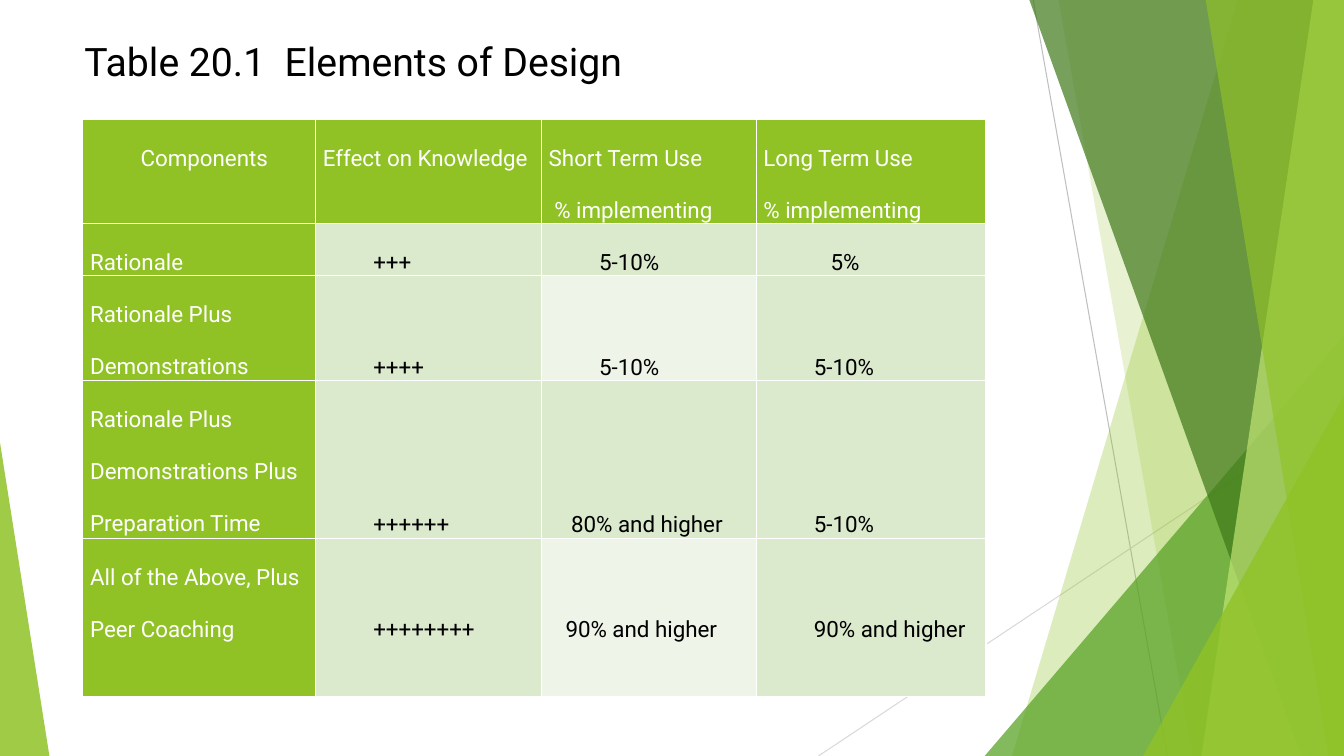
from lxml.etree import SubElement
from pptx import Presentation
from pptx.dml.color import RGBColor
from pptx.enum.shapes import MSO_CONNECTOR as Link, MSO_SHAPE as Shape
from pptx.enum.text import MSO_ANCHOR as Anchor
from pptx.oxml import parse_xml
from pptx.oxml.ns import nsdecls, qn
from pptx.util import Pt

WHITE = RGBColor(0xFF, 0xFF, 0xFF)
BLACK = RGBColor(0, 0, 0)
LIME = RGBColor(0x90, 0xC2, 0x26)
GREEN = RGBColor(0x54, 0xA0, 0x21)
FOREST = RGBColor(0x3F, 0x78, 0x19)
PALE = RGBColor(0xC0, 0xE4, 0x74)
MINT = RGBColor(0xDB, 0xE9, 0xCD)
MIST = RGBColor(0xEE, 0xF4, 0xE8)
GREY = RGBColor(0xBF, 0xBF, 0xBF)
SILVER = RGBColor(0xD9, 0xD9, 0xD9)
FONT = "Roboto"
WIDE, HIGH = 960, 540

# Content: each cell is a list of (text, indent)
TITLE = "Table 20.1  Elements of Design"
ROWS = [
    [[("Components", 36)], [("Effect on Knowledge", 0)],
     [("Short Term Use", 0), ("% implementing", 4)],
     [("Long Term Use", 0), ("% implementing", 0)]],
    [[("Rationale", 0)], [("+++", 36)], [("5-10%", 36)], [("5%", 48)]],
    [[("Rationale Plus Demonstrations", 0)], [("++++", 36)],
     [("5-10%", 36)], [("5-10%", 36)]],
    [[("Rationale Plus Demonstrations Plus Preparation Time", 0)],
     [("++++++", 36)], [("80% and higher", 16)], [("5-10%", 36)]],
    [[("All of the Above, Plus Peer Coaching", 0)], [("++++++++", 36)],
     [("90% and higher", 12)], [("90% and higher", 36)]],
]
COLS = [166.3, 161.3, 153.4, 164.2]
TALL = [73.6, 37.2, 74.2, 113, 112.6]
DROP = [0, 0, 1, 2, 1]  # lines skipped above the values in each row
LINE = 37.5             # height of a double-spaced 16 pt line

# Decoration, from back to front
RULES = [(738, 0, 833.8, HIGH, GREY), (WIDE, 290.2, 584.6, HIGH, SILVER)]
PANES = [  # bands: top x, bottom x; triangles: left, top, width, apex
    ("band", (884.2, 722.9), LIME, 30),
    ("band", (756, 851.8), LIME, 20),
    ("tri", (703.4, 239.8, 256.6, 1), GREEN, 72),
    ("band", (735.1, 929.5), FOREST, 70),
    ("band", (938.2, 858.2), PALE, 70),
    ("band", (861.1, 949), LIME, 65),
    ("tri", (816.5, 283, 143.5, 1), LIME, 80),
    ("tri", (0, 316.1, 35.3, 0), LIME, 85),
]

deck = Presentation()
deck.slide_width, deck.slide_height = Pt(WIDE), Pt(HIGH)
slide = deck.slides.add_slide(deck.slide_layouts[6])
shapes = slide.shapes


def style(par, size, color):
    for run in par.runs:
        run.font.name, run.font.size = FONT, Pt(size)
        run.font.bold = False
        run.font.color.rgb = color


def band(top, base):
    pen = shapes.build_freeform(Pt(top), Pt(-0.6))
    pen.add_line_segments([(Pt(x), Pt(y)) for x, y in
                           ((WIDE, -0.6), (WIDE, HIGH), (base, HIGH))])
    return pen.convert_to_shape()


def tri(left, top, width, apex):
    shape = shapes.add_shape(Shape.ISOSCELES_TRIANGLE, Pt(left), Pt(top),
                             Pt(width), Pt(HIGH - top))
    shape.adjustments[0] = apex
    return shape


def edge(cell):
    props = cell._tc.get_or_add_tcPr()
    for i, side in enumerate("LRTB"):
        props.insert(i, parse_xml(
            f'<a:ln{side} {nsdecls("a")} w="12700"><a:solidFill>'
            f'<a:srgbClr val="{WHITE}"/></a:solidFill></a:ln{side}>'))


# Thin lines
for x, y, x2, y2, color in RULES:
    rule = shapes.add_connector(Link.STRAIGHT, Pt(x), Pt(y), Pt(x2), Pt(y2))
    rule.line.color.rgb, rule.line.width = color, Pt(0.75)
    SubElement(rule._element.spPr, qn("a:effectLst"))

# Glass panes
for kind, args, color, alpha in PANES:
    pane = band(*args) if kind == "band" else tri(*args)
    pane.shadow.inherit = False
    pane.line.fill.background()
    pane.fill.solid()
    pane.fill.fore_color.rgb = color
    tint = pane._element.spPr.find(qn("a:solidFill"))[0]
    SubElement(tint, qn("a:alpha")).set("val", str(alpha * 1000))

# Table
table = shapes.add_table(len(ROWS), len(COLS), Pt(59.2), Pt(85.4),
                         Pt(sum(COLS)), Pt(sum(TALL))).table
for col, width in zip(table.columns, COLS):
    col.width = Pt(width)
for r, row in enumerate(ROWS):
    table.rows[r].height = Pt(TALL[r])
    for c, lines in enumerate(row):
        cell = table.cell(r, c)
        head = r == 0 or c == 0
        cell.margin_left = cell.margin_right = Pt(5.2)
        cell.margin_top = Pt(0 if head else DROP[r] * LINE)
        cell.margin_bottom = 0
        cell.vertical_anchor = Anchor.TOP
        cell.fill.solid()
        pale = c == 2 and r % 2 == 0
        cell.fill.fore_color.rgb = LIME if head else MIST if pale else MINT
        edge(cell)
        cell.text_frame.text = "\n".join(text for text, _ in lines)
        for par, (_, indent) in zip(cell.text_frame.paragraphs, lines):
            par.line_spacing = 2.0
            par._p.get_or_add_pPr().set("marL", str(Pt(indent)))
            style(par, 16, WHITE if head else BLACK)

# Title
box = shapes.add_textbox(Pt(53.3), Pt(23), Pt(676.8), Pt(32.4))
box.text_frame.word_wrap = True
box.text_frame.text = TITLE
style(box.text_frame.paragraphs[0], 28, BLACK)

deck.save("out.pptx")
